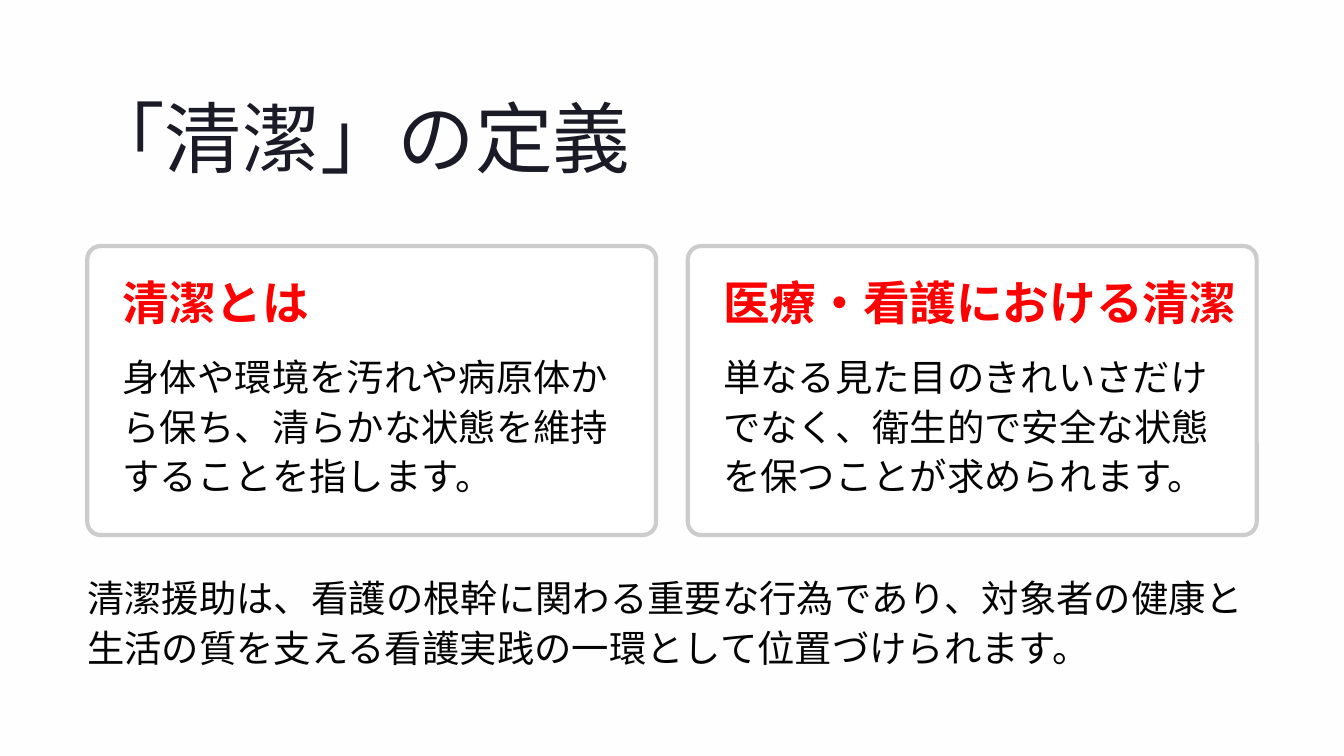
from pptx import Presentation
from pptx.dml.color import RGBColor
from pptx.enum.shapes import MSO_SHAPE
from pptx.enum.text import MSO_ANCHOR, MSO_AUTO_SIZE, PP_ALIGN
from pptx.util import Cm, Pt

ROUNDED = MSO_SHAPE.ROUNDED_RECTANGLE
TOP = MSO_ANCHOR.TOP
NO_FIT = MSO_AUTO_SIZE.NONE
LEFT = PP_ALIGN.LEFT

TITLE_COLOR = "1B1B27"
HEADING_COLOR = "FF0000"
BODY_COLOR = "030303"


def rgb(value):
    return RGBColor.from_string(value)


def write(sp, box, text, font, size, color, spacing, bold=False, wrap=True):
    sp.left, sp.top, sp.width, sp.height = [Cm(v) for v in box]
    tf = sp.text_frame
    tf.margin_left = tf.margin_top = tf.margin_right = tf.margin_bottom = 0
    tf.auto_size = NO_FIT
    tf.vertical_anchor = TOP
    tf.word_wrap = wrap
    p = tf.paragraphs[0]
    p.alignment = LEFT
    p.line_spacing = Pt(spacing)
    p.space_before = Pt(0)
    r = p.add_run()
    r.text = text
    r.font.name = font
    r.font.size = Pt(size)
    r.font.bold = bold
    r.font.color.rgb = rgb(color)


prs = Presentation()
prs.slide_width = Cm(40.64)
prs.slide_height = Cm(22.86)
s = prs.slides.add_slide(prs.slide_layouts[5])
s.background.fill.solid()
s.background.fill.fore_color.rgb = rgb("FEFEFE")

write(s.shapes.title, (2.64, 2.59, 23.62, 2.95), "「清潔」の定義",
      "Inter", 66.5, TITLE_COLOR, 83.5, wrap=False)

margin = 2.64
card_top, card_width, card_height = 7.44, 17.2, 8.74
card_step = 18.16
padding = 1.07
cards = [
    ("清潔とは", 11.81,
     "身体や環境を汚れや病原体から保ち、清らかな状態を維持することを指します。"),
    ("医療・看護における清潔", 13,
     "単なる見た目のきれいさだけでなく、衛生的で安全な状態を保つことが求められます。"),
]
for i, (heading, heading_width, body) in enumerate(cards):
    left = margin + i * card_step
    card = s.shapes.add_shape(ROUNDED, Cm(left), Cm(card_top),
                              Cm(card_width), Cm(card_height))
    card.adjustments[0] = 0.046
    card.shadow.inherit = False
    card.fill.solid()
    card.fill.fore_color.rgb = rgb("FFFFFF")
    card.line.color.rgb = rgb("CCCCCC")
    card.line.width = Pt(3.6)

    text_left = left + padding
    write(s.shapes.add_textbox(0, 0, 0, 0),
          (text_left, card_top + padding, heading_width, 1.47), heading,
          "Inter", 40, HEADING_COLOR, 41.5, bold=True, wrap=False)
    write(s.shapes.add_textbox(0, 0, 0, 0),
          (text_left, 10.57, card_width - 2 * padding, 4.55), body,
          "Cabin", 32, BODY_COLOR, 42.5)

write(s.shapes.add_textbox(0, 0, 0, 0),
      (margin, 17.25, card_step + card_width, 3.02),
      "清潔援助は、看護の根幹に関わる重要な行為であり、対象者の健康と生活の質を支える看護実践の一環として位置づけられます。",
      "Cabin", 32, BODY_COLOR, 42.5)

prs.save("out.pptx")
